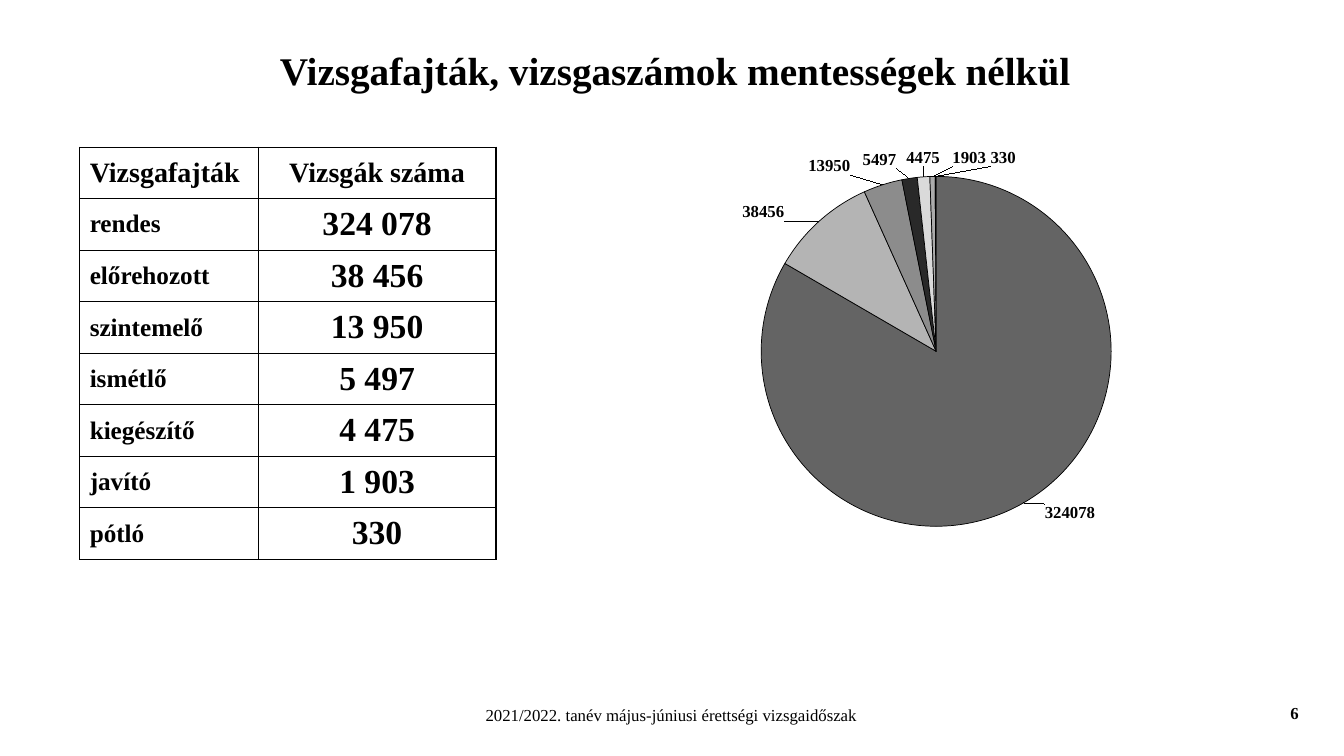
from dataclasses import dataclass

from lxml import etree
from pptx import Presentation
from pptx import util as u
from pptx.chart.data import CategoryChartData
from pptx.dml.color import RGBColor
from pptx.enum import chart as charts
from pptx.enum import text
from pptx.oxml import parse_xml
from pptx.oxml.ns import nsdecls, qn


@dataclass(frozen=True)
class Theme:
    font: str = "Times New Roman"
    chart_font: str = "DejaVu Sans"
    ink: str = "000000"
    slices: tuple = ("646464", "B4B4B4", "8C8C8C", "292929",
                     "DADADA", "ABABAB", "7F7F7F")
    title: int = 28
    header: int = 20
    kind: int = 18
    count: int = 24
    small: int = 12
    chart: int = 10


THEME = Theme()
WIDTH, HEIGHT = u.Inches(13.33), u.Inches(7.5)
EXAMS = {
    "rendes": 324078,
    "előrehozott": 38456,
    "szintemelő": 13950,
    "ismétlő": 5497,
    "kiegészítő": 4475,
    "javító": 1903,
    "pótló": 330,
}
# Label shifts from the slice edge, as shares of the chart's size
LABEL_SHIFTS = ((0.03, -0.01), (-0.05, 0.01), (-0.05, -0.01), (-0.02, -0.01),
                (0, -0.01), (0.06, -0.01), (0.11, -0.01))
PIE_AREA = {"x": 0.22, "y": 0.09, "w": 0.57, "h": 0.85}


def area(left, top, width, height):
    """Turn inches into left, top, width and height."""
    return [u.Inches(value) for value in (left, top, width, height)]


def style_font(font, size, bold=True, name=THEME.font):
    font.name = name
    font.size = u.Pt(size)
    font.bold = bold
    font.color.rgb = RGBColor.from_string(THEME.ink)


def write(frame, words, size, align=text.PP_ALIGN.LEFT, bold=True):
    frame.text = words
    para = frame.paragraphs[0]
    para.alignment = align
    for span in para.runs:
        style_font(span.font, size, bold)


def add_title(page, words):
    title = page.shapes.title
    title.left, title.top, title.width, title.height = area(0.79, 0.2, 11.81, 0.98)
    title.text_frame.vertical_anchor = text.MSO_ANCHOR.MIDDLE
    write(title.text_frame, words, THEME.title, text.PP_ALIGN.CENTER)


def add_note(page, words, place, align, bold, wrap):
    box = page.shapes.add_textbox(*area(*place))
    box.text_frame.word_wrap = wrap
    write(box.text_frame, words, THEME.small, align, bold)


def frame_cell(cell):
    """Give the cell thin borders and no fill."""
    properties = cell._tc.get_or_add_tcPr()
    for side in "LRTB":
        properties.append(parse_xml(
            f'<a:ln{side} {nsdecls("a")} w="12700"><a:solidFill>'
            f'<a:srgbClr val="{THEME.ink}"/></a:solidFill></a:ln{side}>'))
    cell.fill.background()


def add_exam_table(page, place, column_widths):
    rows = [("Vizsgafajták", "Vizsgák száma")]
    rows += [(kind, f"{count:,}".replace(",", " ")) for kind, count in EXAMS.items()]
    table = page.shapes.add_table(len(rows), 2, *area(*place)).table
    for column, width in zip(table.columns, column_widths):
        column.width = u.Inches(width)
    aligns = (text.PP_ALIGN.LEFT, text.PP_ALIGN.CENTER)
    for row, words in enumerate(rows):
        sizes = (THEME.kind, THEME.count) if row else (THEME.header, THEME.header)
        for column in range(2):
            cell = table.cell(row, column)
            cell.vertical_anchor = text.MSO_ANCHOR.MIDDLE
            write(cell.text_frame, words[column], sizes[column], aligns[column])
            frame_cell(cell)


def make_layout(values, inner=False):
    layout = etree.Element(qn("c:layout"))
    manual = etree.SubElement(layout, qn("c:manualLayout"))
    if inner:
        etree.SubElement(manual, qn("c:layoutTarget"), val="inner")
        for axis in "xy":
            etree.SubElement(manual, qn(f"c:{axis}Mode"), val="edge")
    for name, value in values.items():
        etree.SubElement(manual, qn(f"c:{name}"), val=str(value))
    return layout


def place_pie(chart):
    plot_area = chart._chartSpace.chart.plotArea
    for layout in plot_area.findall(qn("c:layout")):
        plot_area.remove(layout)
    plot_area.insert(0, make_layout(PIE_AREA, inner=True))


def style_slice(point, color):
    point.format.fill.solid()
    point.format.fill.fore_color.rgb = RGBColor.from_string(color)
    point.format.line.color.rgb = RGBColor.from_string(THEME.ink)
    point.format.line.width = u.Pt(0.5)


def place_label(series, index, shift):
    label = series.points[index].data_label
    style_font(label.font, THEME.small)
    label.position = charts.XL_LABEL_POSITION.OUTSIDE_END
    element = series.data_labels._element.xpath(f"c:dLbl[c:idx/@val='{index}']")[0]
    element.insert(1, make_layout(dict(zip("xy", shift))))


def add_exam_pie(page, place):
    data = CategoryChartData()
    data.categories = [str(number) for number in range(1, len(EXAMS) + 1)]
    data.add_series("Series 1", list(EXAMS.values()))
    chart = page.shapes.add_chart(
        charts.XL_CHART_TYPE.PIE, *area(*place), data).chart
    chart.has_title = chart.has_legend = False
    style_font(chart.font, THEME.chart, False, THEME.chart_font)
    place_pie(chart)
    chart.plots[0].vary_by_categories = True
    series = chart.plots[0].series[0]
    labels = series.data_labels
    labels.show_value = True
    labels.position = charts.XL_LABEL_POSITION.OUTSIDE_END
    style_font(labels.font, THEME.small)
    for index, (color, shift) in enumerate(zip(THEME.slices, LABEL_SHIFTS)):
        style_slice(series.points[index], color)
        place_label(series, index, shift)


def main():
    deck = Presentation()
    deck.slide_width, deck.slide_height = WIDTH, HEIGHT
    page = deck.slides.add_slide(deck.slide_layouts.get_by_name("Title Only"))
    add_note(page, "2021/2022. tanév május-júniusi érettségi vizsgaidőszak",
             (3.59, 6.94, 6.14, 0.3), text.PP_ALIGN.CENTER, bold=False, wrap=True)
    add_note(page, "6", (12.7, 6.92, 0.29, 0.3), text.PP_ALIGN.LEFT,
             bold=True, wrap=False)
    add_title(page, "Vizsgafajták, vizsgaszámok mentességek nélkül")
    add_exam_table(page, (0.79, 1.46, 4.13, 4.09), (1.77, 2.36))
    add_exam_pie(page, (6.21, 1.38, 6.09, 4.09))
    deck.save("out.pptx")


if __name__ == "__main__":
    main()
